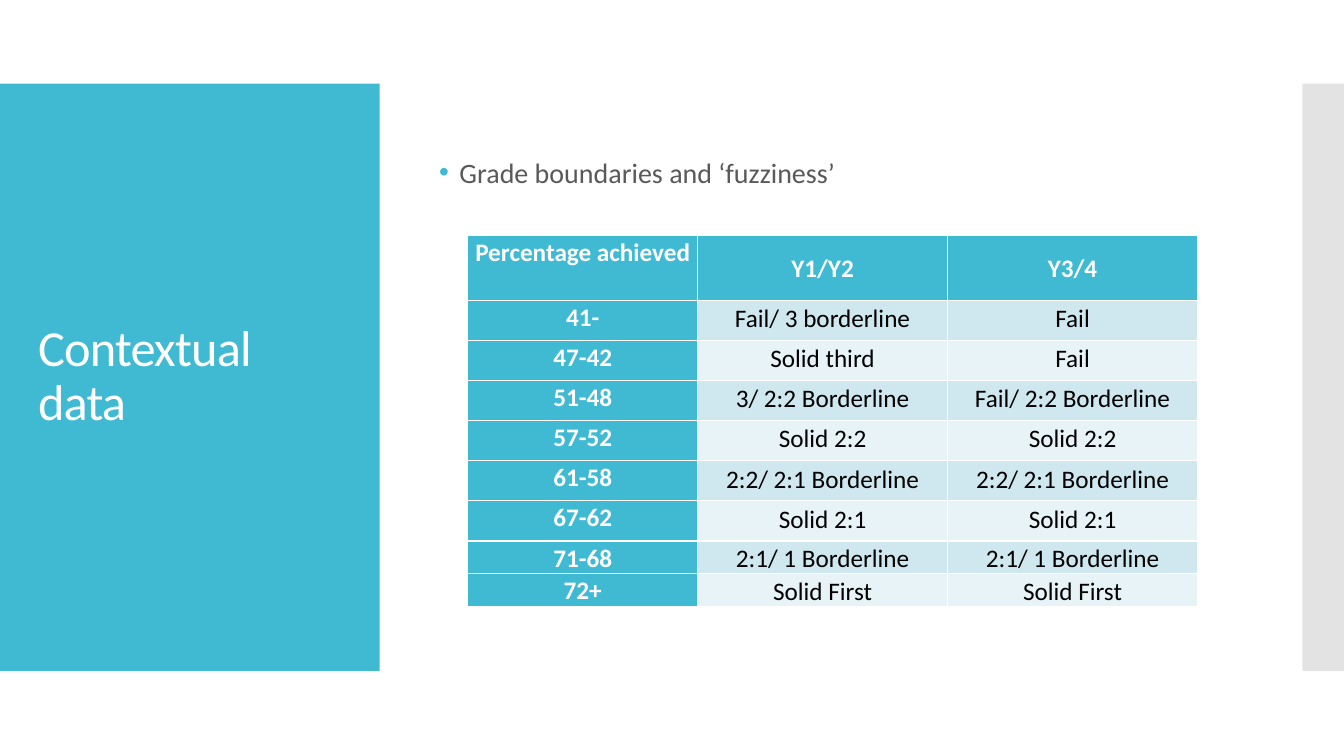
from lxml.etree import SubElement as Sub
from pptx import Presentation
from pptx.dml.color import RGBColor as RGB
from pptx.enum.shapes import MSO_SHAPE as Shape
from pptx.enum.text import MSO_ANCHOR as Anchor, PP_ALIGN as Align
from pptx.oxml.ns import qn
from pptx.util import Cm, Pt

TEAL, WHITE = "40BAD2", "FFFFFF"


def paint(fill, color):
    fill.solid()
    fill.fore_color.rgb = RGB.from_string(color)


def write(frame, text, size, color, bold=False):
    """Add one run to the first paragraph, centred vertically, and return both."""
    frame.word_wrap = True
    frame.vertical_anchor = Anchor.MIDDLE
    para = frame.paragraphs[0]
    run = para.add_run()
    run.text = text
    run.font.name = "Calibri"
    run.font.size = Pt(size)
    run.font.bold = bold
    run.font.color.rgb = RGB.from_string(color)
    return para, run


deck = Presentation()
deck.slide_width, deck.slide_height = Cm(33.87), Cm(19.05)
slide = deck.slides.add_slide(deck.slide_layouts[6])
shapes = slide.shapes

# Side panels
for left, width, color in [(0, 9.57, TEAL), (32.82, 1.05, "C8C8C8")]:
    panel = shapes.add_shape(Shape.RECTANGLE, Cm(left), Cm(2.11), Cm(width), Cm(14.8))
    panel.shadow.inherit = False
    panel.line.fill.background()
    paint(panel.fill, color)
tint = panel.fill._xPr.find(".//" + qn("a:srgbClr"))
Sub(tint, qn("a:alpha"), val="50000")

# Title
title = shapes.add_textbox(Cm(0.71), Cm(3.12), Cm(8.18), Cm(12.78))
para, run = write(title.text_frame, "Contextual data", 36, WHITE)
para.line_spacing = 0.9
run.font._element.set("spc", "-60")

# Bullet point
point = shapes.add_textbox(Cm(10.82), Cm(3.75), Cm(20.32), Cm(1.27))
para, run = write(point.text_frame, "Grade boundaries and ‘fuzziness’", 20, "595959")
para.line_spacing = 0.9
props = para._p.get_or_add_pPr()
props.set("marL", str(Cm(0.51)))
props.set("indent", str(Cm(-0.51)))
Sub(Sub(props, qn("a:buClr")), qn("a:srgbClr"), val=TEAL)
Sub(props, qn("a:buFont"), typeface="Arial")
Sub(props, qn("a:buChar"), char="•")

# Grade table
grades = [
    ("Percentage achieved", "Y1/Y2", "Y3/4"),
    ("41-", "Fail/ 3 borderline", "Fail"),
    ("47-42", "Solid third", "Fail"),
    ("51-48", "3/ 2:2 Borderline", "Fail/ 2:2 Borderline"),
    ("57-52", "Solid 2:2", "Solid 2:2"),
    ("61-58", "2:2/ 2:1 Borderline", "2:2/ 2:1 Borderline"),
    ("67-62", "Solid 2:1", "Solid 2:1"),
    ("71-68", "2:1/ 1 Borderline", "2:1/ 1 Borderline"),
    ("72+", "Solid First", "Solid First"),
]
widths = [5.79, 6.3, 6.3]
heights = [1.64] + [1.01] * 6 + [0.83] * 2
frame = shapes.add_table(len(grades), len(widths), Cm(11.79), Cm(5.93),
                         Cm(sum(widths)), Cm(sum(heights)))
table = frame.table
table.first_col = True
for col, width in zip(table.columns, widths):
    col.width = Cm(width)
for r, (row, height) in enumerate(zip(grades, heights)):
    table.rows[r].height = Cm(height)
    for c, text in enumerate(row):
        cell = table.cell(r, c)
        head = r == 0 or c == 0
        band = "CFE7EE" if r % 2 else "E8F3F7"
        paint(cell.fill, TEAL if head else band)
        cell.margin_left = cell.margin_right = Cm(0.18)
        cell.margin_top = cell.margin_bottom = 0
        para, run = write(cell.text_frame, text, 18, WHITE if head else "000000", head)
        para.alignment = Align.CENTER
        para.line_spacing = 1.07 if head or r > 6 else Pt(20)
        cell.vertical_anchor = Anchor.TOP if c == 0 else Anchor.MIDDLE

deck.save("out.pptx")
